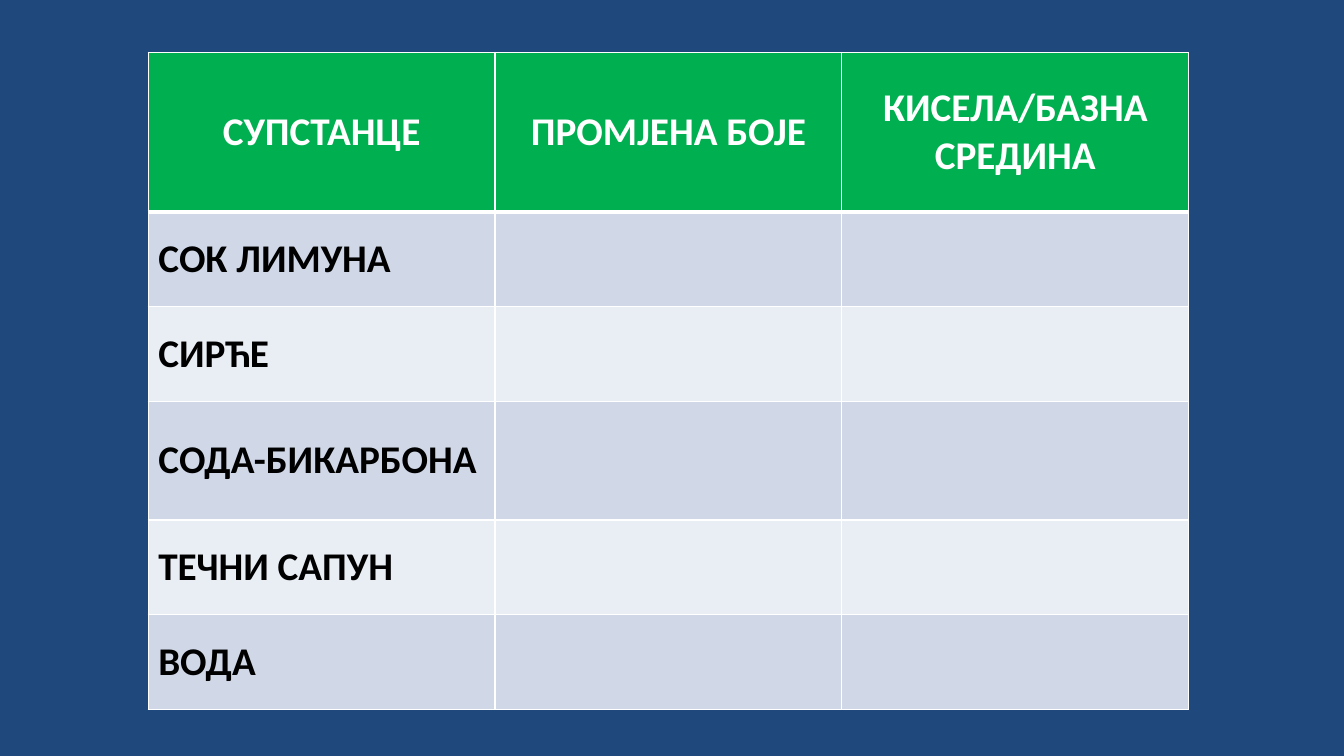
from dataclasses import dataclass

import pptx
import pptx.dml.color
import pptx.enum.text
import pptx.oxml
import pptx.oxml.ns
import pptx.presentation
import pptx.slide
import pptx.table
import pptx.util
from pptx.util import Inches


@dataclass(frozen=True)
class Theme:
    font: str = "Calibri"
    text_size: int = 28
    background: str = "1F497D"
    header_fill: str = "00B050"
    header_text: str = "FFFFFF"
    body_text: str = "000000"
    bands: tuple[str, str] = ("D0D8E8", "E9EDF4")
    border: str = "FFFFFF"
    border_width: float = 1
    header_rule_width: float = 3


@dataclass(frozen=True)
class TableRow:
    labels: tuple[str, ...]
    height: float = 0.94


THEME = Theme()
COLUMN_COUNT = 3
COLUMN_WIDTH = 3.44
TABLE_LEFT, TABLE_TOP = 1.47, 0.52
ROWS = (
    TableRow(("СУПСТАНЦЕ", "ПРОМЈЕНА БОЈЕ", "КИСЕЛА/БАЗНА СРЕДИНА"), 1.58),
    TableRow(("СОК ЛИМУНА",)),
    TableRow(("СИРЋЕ",)),
    TableRow(("СОДА-БИКАРБОНА",), 1.18),
    TableRow(("ТЕЧНИ САПУН",)),
    TableRow(("ВОДА",)),
)


def rgb(value: str) -> pptx.dml.color.RGBColor:
    return pptx.dml.color.RGBColor.from_string(value)


def set_borders(cell: pptx.table._Cell, row_index: int) -> None:
    """Outline a cell, with a heavier rule between header and body."""
    widths = dict.fromkeys(("lnL", "lnR", "lnT", "lnB"), THEME.border_width)
    if row_index == 0:
        widths["lnB"] = THEME.header_rule_width
    elif row_index == 1:
        widths["lnT"] = THEME.header_rule_width
    properties = cell._tc.get_or_add_tcPr()
    namespace = pptx.oxml.ns.nsdecls("a")
    for tag, width in widths.items():
        properties.append(pptx.oxml.parse_xml(
            f'<a:{tag} {namespace} w="{pptx.util.Pt(width)}"><a:solidFill>'
            f'<a:srgbClr val="{THEME.border}"/></a:solidFill></a:{tag}>'
        ))


def set_fill(cell: pptx.table._Cell, row_index: int) -> None:
    color = THEME.bands[(row_index - 1) % 2] if row_index else THEME.header_fill
    cell.fill.solid()
    cell.fill.fore_color.rgb = rgb(color)


def write_label(cell: pptx.table._Cell, label: str, is_header: bool) -> None:
    cell.vertical_anchor = pptx.enum.text.MSO_ANCHOR.MIDDLE
    paragraph = cell.text_frame.paragraphs[0]
    alignment = pptx.enum.text.PP_ALIGN
    paragraph.alignment = alignment.CENTER if is_header else alignment.LEFT
    run = paragraph.add_run()
    run.text = label
    run.font.name = THEME.font
    run.font.size = pptx.util.Pt(THEME.text_size)
    run.font.bold = True
    run.font.color.rgb = rgb(THEME.header_text if is_header else THEME.body_text)


def add_substance_table(slide: pptx.slide.Slide) -> None:
    table = slide.shapes.add_table(
        len(ROWS), COLUMN_COUNT, Inches(TABLE_LEFT), Inches(TABLE_TOP),
        Inches(COLUMN_COUNT * COLUMN_WIDTH), Inches(sum(row.height for row in ROWS)),
    ).table
    for column in table.columns:
        column.width = Inches(COLUMN_WIDTH)
    for row_index, row in enumerate(ROWS):
        table.rows[row_index].height = Inches(row.height)
        for cell in table.rows[row_index].cells:
            set_borders(cell, row_index)
            set_fill(cell, row_index)
        for column_index, label in enumerate(row.labels):
            write_label(table.cell(row_index, column_index), label, row_index == 0)


def main() -> None:
    presentation = pptx.Presentation()
    presentation.slide_width = Inches(13.33)
    presentation.slide_height = Inches(7.5)
    slide = presentation.slides.add_slide(presentation.slide_layouts[6])
    slide.background.fill.solid()
    slide.background.fill.fore_color.rgb = rgb(THEME.background)
    add_substance_table(slide)
    presentation.save("out.pptx")


if __name__ == "__main__":
    main()
